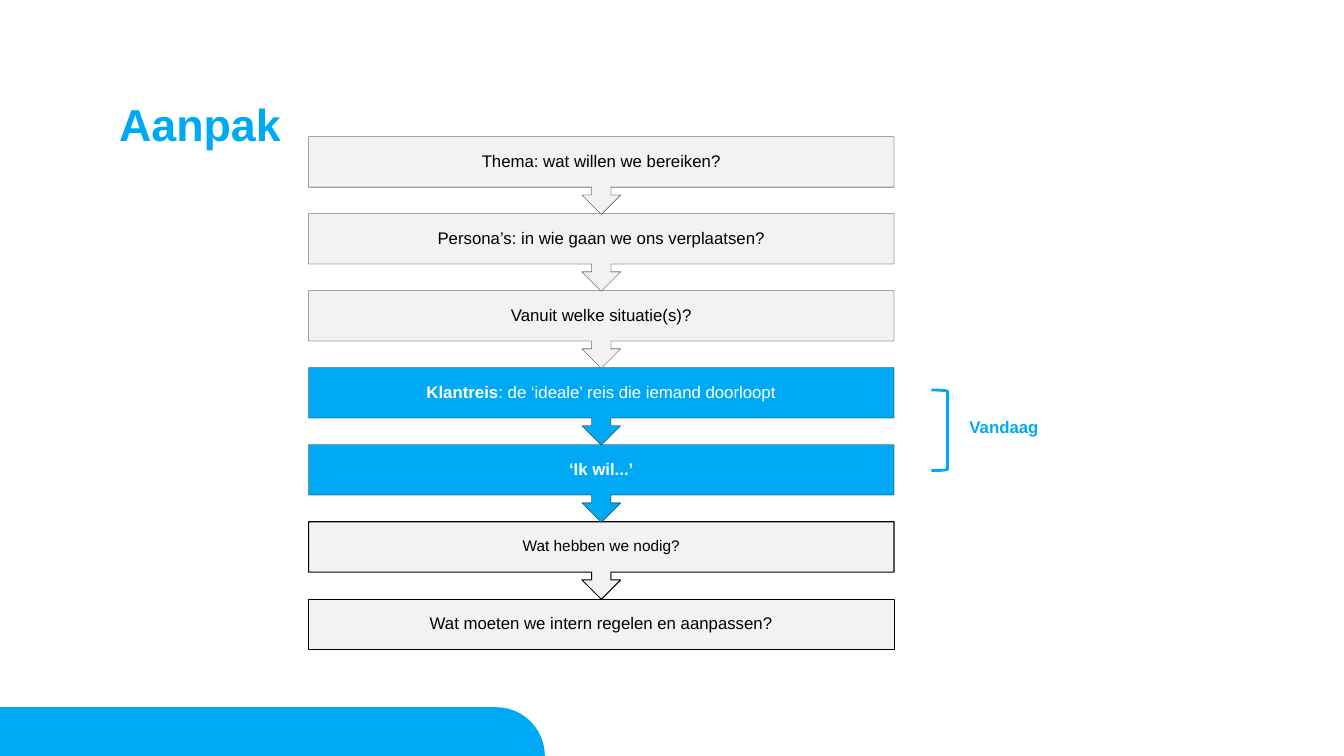
from math import cos, pi, sin

from pptx import Presentation
from pptx.dml.color import RGBColor
from pptx.enum.shapes import MSO_SHAPE as Preset
from pptx.enum.text import MSO_ANCHOR as Anchor, PP_ALIGN as Align
from pptx.util import Pt

BLUE = RGBColor(0x00, 0xA9, 0xF3)
GREY = RGBColor(0xF2, 0xF2, 0xF2)
BLACK = RGBColor(0x00, 0x00, 0x00)
WHITE = RGBColor(0xFF, 0xFF, 0xFF)

SLIDE_WIDTH, SLIDE_HEIGHT = 960, 540
STEP_LEFT, STEP_TOP, STEP_WIDTH = 220.4, 97.7, 418.2
STEP_PITCH, CALLOUT_HEIGHT, BOX_HEIGHT = 55, 55.4, 36

# Each step: runs as (text, bold), font size, highlighted, line width
STEPS = [
    ([("Thema: wat willen we bereiken?", False)], 12, False, 0.2),
    ([("Persona’s: in wie gaan we ons verplaatsen?", False)], 12, False, 0.2),
    ([("Vanuit welke situatie(s)?", False)], 12, False, 0.2),
    ([("Klantreis", True), (": de ‘ideale’ reis die iemand doorloopt", False)],
     12, True, 0.2),
    ([("‘Ik wil...’", True)], 12, True, 0.2),
    ([("Wat hebben we nodig?", False)], 11, False, 0.75),
    ([("Wat moeten we intern regelen en aanpassen?", False)], 12, False, 0.2),
]


def write_text(shape, runs, size=12, color=BLACK, align=Align.LEFT,
               anchor=Anchor.TOP, margins=(7.2, 3.6), spacing=1.0):
    frame = shape.text_frame
    frame.word_wrap = True
    frame.vertical_anchor = anchor
    frame.margin_left = frame.margin_right = Pt(margins[0])
    frame.margin_top = frame.margin_bottom = Pt(margins[1])
    paragraph = frame.paragraphs[0]
    paragraph.alignment = align
    paragraph.line_spacing = spacing
    for text, bold in runs:
        run = paragraph.add_run()
        run.text = text
        run.font.name = "Arial"
        run.font.size = Pt(size)
        run.font.bold = bold
        run.font.color.rgb = color


def add_label(slide, left, top, width, height, text, **text_format):
    box = slide.shapes.add_textbox(Pt(left), Pt(top), Pt(width), Pt(height))
    write_text(box, [(text, True)], color=BLUE, **text_format)


def add_step(slide, index, runs, size, highlighted, line_width):
    is_last = index == len(STEPS) - 1
    preset = Preset.RECTANGLE if is_last else Preset.DOWN_ARROW_CALLOUT
    height = BOX_HEIGHT if is_last else CALLOUT_HEIGHT
    shape = slide.shapes.add_shape(
        preset, Pt(STEP_LEFT), Pt(STEP_TOP + index * STEP_PITCH),
        Pt(STEP_WIDTH), Pt(height))
    shape.shadow.inherit = False
    shape.fill.solid()
    shape.fill.fore_color.rgb = BLUE if highlighted else GREY
    shape.line.color.rgb = BLACK
    shape.line.width = Pt(line_width)
    write_text(shape, runs, size=size, color=WHITE if highlighted else BLACK,
               align=Align.CENTER, anchor=Anchor.MIDDLE, margins=(6.5, 6.5),
               spacing=0.9)


def add_bracket(slide, left, top, width, height):
    bracket = slide.shapes.add_shape(
        Preset.RIGHT_BRACKET, Pt(left), Pt(top), Pt(width), Pt(height))
    bracket.shadow.inherit = False
    bracket.fill.background()
    bracket.line.color.rgb = BLUE
    bracket.line.width = Pt(2)


def add_footer_band(slide, width, height):
    """Draw a band along the bottom edge with a quarter-circle right end."""
    center = width - height
    angles = [pi / 2 * step / 24 for step in range(25)]
    arc = [(Pt(center + height * sin(angle)),
            Pt(SLIDE_HEIGHT - height * cos(angle))) for angle in angles]
    builder = slide.shapes.build_freeform(Pt(0), Pt(SLIDE_HEIGHT))
    builder.add_line_segments([(Pt(0), Pt(SLIDE_HEIGHT - height))] + arc)
    band = builder.convert_to_shape()
    band.shadow.inherit = False
    band.fill.solid()
    band.fill.fore_color.rgb = BLUE
    band.line.fill.background()


def main():
    presentation = Presentation()
    presentation.slide_width = Pt(SLIDE_WIDTH)
    presentation.slide_height = Pt(SLIDE_HEIGHT)
    slide = presentation.slides.add_slide(presentation.slide_layouts[6])

    # Footer and title
    add_footer_band(slide, 389.2, 34.8)
    add_label(slide, 85, 73.4, 790, 41.8, "Aanpak", size=32, margins=(0, 0),
              spacing=0.9)

    # Steps, from the bottom up so that each arrow overlaps the next box
    for index, step in reversed(list(enumerate(STEPS))):
        add_step(slide, index, *step)

    # Marker for today's steps
    add_label(slide, 685.4, 294.5, 209.5, 21.6, "Vandaag")
    add_bracket(slide, 665.3, 278.6, 11.5, 57.6)

    presentation.save("out.pptx")


if __name__ == "__main__":
    main()
